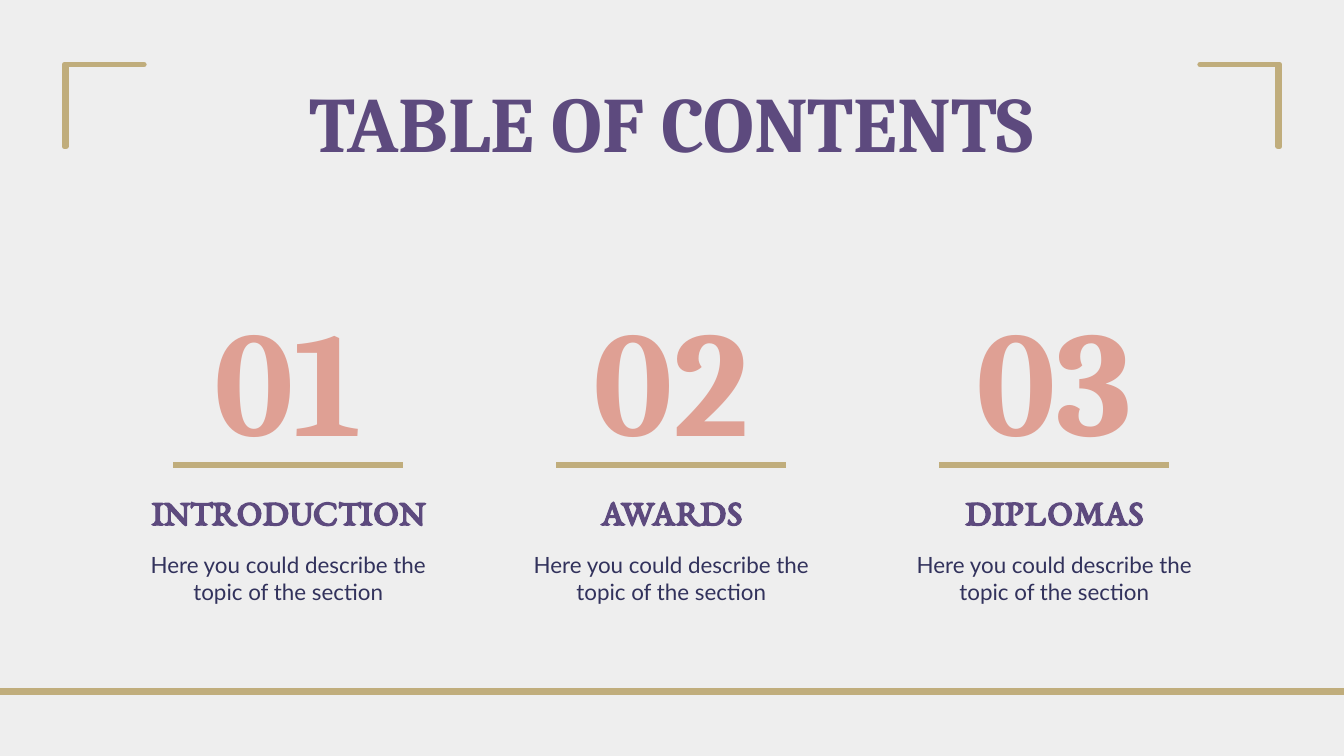
from lxml import etree
from pptx import Presentation
from pptx import util as u
from pptx.dml.color import RGBColor
from pptx.enum import shapes, text
from pptx.oxml.ns import qn

WIDE = 10
HIGH = WIDE * 9 / 16
LEFT, SPAN, PITCH = 1.29, 1.71, 2.85
GOLD, PLUM = "C0AD7C", "5D4A7E"
TOPICS = ["INTRODUCTION", "AWARDS", "DIPLOMAS"]
BLURB = "Here you could describe the topic of the section"

HEAD = dict(size=u.Pt(42), name="Cambria", bold=True, color=PLUM)
NUMBER = dict(size=u.Pt(80), name="Cambria", bold=True, color="DFA094")
TOPIC = dict(size=u.Pt(20), name="EB Garamond", bold=True, color=PLUM)
BODY = dict(size=u.Pt(12), name="Lato", bold=False, color="32325C")

BASE = [(10.02, 5.15), (10.02, 5.14), (-0.08, 5.14),
        (-0.08, 4.56), (-0.09, 4.56), (-0.09, 5.15)]
CORNER = [(0.48, 1.09), (0.49, 1.09), (0.49, 0.48),
          (1.07, 0.48), (0.48, 0.48)]


def paint(target, color):
    target.rgb = RGBColor.from_string(color)


def write(box, words, form, anchor=text.MSO_ANCHOR.TOP):
    """Put one centred, formatted paragraph into a box."""
    frame = box.text_frame
    frame.word_wrap = True
    frame.auto_size = text.MSO_AUTO_SIZE.NONE
    frame.vertical_anchor = anchor
    for side in ("left", "top", "right", "bottom"):
        setattr(frame, f"margin_{side}", u.Inches(0.1))
    para = frame.paragraphs[0]
    para.alignment = text.PP_ALIGN.CENTER
    run = para.add_run()
    run.text = words
    for key, value in form.items():
        if key == "color":
            paint(run.font.color, value)
        else:
            setattr(run.font, key, value)


def label(slide, mid, top, wide, high, words, form, **opts):
    """Add a text box centred on the column middle."""
    box = slide.shapes.add_textbox(
        *map(u.Inches, (mid - wide / 2, top, wide, high)))
    write(box, words, form, **opts)


def stroke(shape):
    shape.line.width = u.Pt(3)
    fill = shape.line.fill
    fill.solid()
    paint(fill.fore_color, GOLD)


def rule(slide, left, right, y):
    line = slide.shapes.add_connector(
        shapes.MSO_CONNECTOR.STRAIGHT,
        *map(u.Inches, (left, y, right, y)))
    stroke(line)
    etree.SubElement(line._element.spPr, qn("a:effectLst"))


def outline(slide, points):
    """Draw a thin closed outline with rounded joins."""
    spots = [(u.Inches(x), u.Inches(y)) for x, y in points]
    pen = slide.shapes.build_freeform(*spots[0])
    pen.add_line_segments(spots[1:], close=True)
    shape = pen.convert_to_shape()
    shape.shadow.inherit = False
    shape.fill.background()
    stroke(shape)
    edge = shape.line._get_or_add_ln()
    edge.set("cap", "rnd")
    etree.SubElement(edge, qn("a:round"))


def column(slide, index):
    left = LEFT + index * PITCH
    mid = left + SPAN / 2
    label(slide, mid, 2.24, 1.71, 1.13, f"{index + 1:02}", NUMBER,
          anchor=text.MSO_ANCHOR.MIDDLE)
    rule(slide, left, left + SPAN, 3.46)
    label(slide, mid, 3.53, 2.52, 0.49, TOPICS[index], TOPIC)
    label(slide, mid, 4, 2.38, 0.39, BLURB, BODY)


def main():
    deck = Presentation()
    deck.slide_width, deck.slide_height = u.Inches(WIDE), u.Inches(HIGH)
    slide = deck.slides.add_slide(deck.slide_layouts[5])
    back = slide.background.fill
    back.solid()
    paint(back.fore_color, "EEEEEE")

    outline(slide, BASE)
    outline(slide, CORNER)
    outline(slide, [(WIDE - x, y) for x, y in CORNER])

    title = slide.shapes.title
    place = dict(left=0.67, top=0.45, width=8.65, height=0.9)
    for key, value in place.items():
        setattr(title, key, u.Inches(value))
    write(title, "TABLE OF CONTENTS", HEAD)

    for index in range(len(TOPICS)):
        column(slide, index)
    deck.save("out.pptx")


if __name__ == "__main__":
    main()
